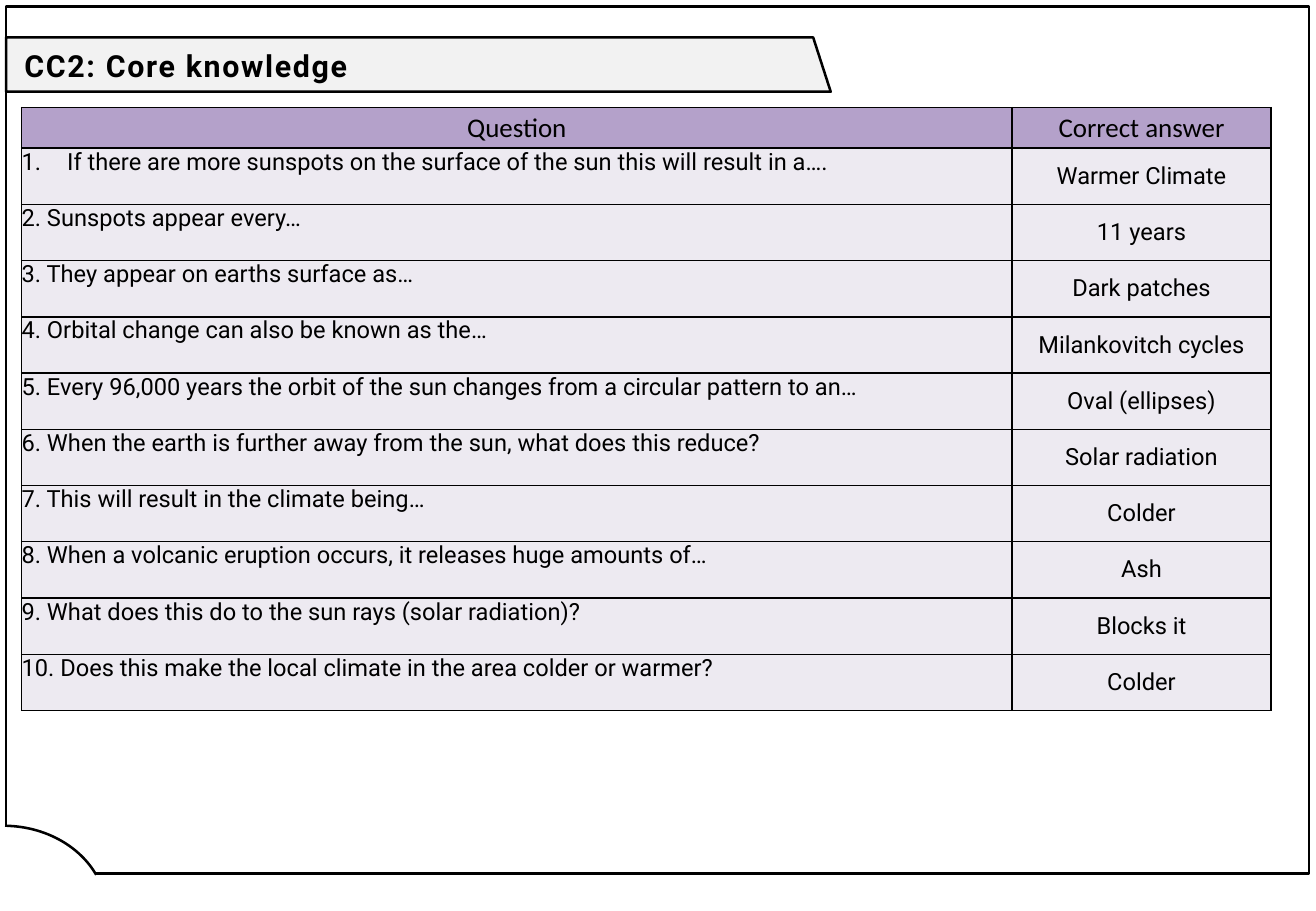
from dataclasses import dataclass

from lxml import etree
from pptx import Presentation
from pptx.dml.color import RGBColor
from pptx.enum.shapes import MSO_SHAPE
from pptx.enum.text import MSO_ANCHOR, MSO_AUTO_SIZE, PP_ALIGN
from pptx.oxml.ns import qn
from pptx.util import Pt

ARC, RECTANGLE = MSO_SHAPE.ARC, MSO_SHAPE.RECTANGLE
TOP, MIDDLE = MSO_ANCHOR.TOP, MSO_ANCHOR.MIDDLE
LEFT, CENTER = PP_ALIGN.LEFT, PP_ALIGN.CENTER
NO_AUTOFIT = MSO_AUTO_SIZE.NONE
TITLE_ONLY = 5


@dataclass(frozen=True)
class Theme:
    ink: str = "000000"
    paper: str = "FFFFFF"
    banner: str = "F2F2F2"
    header: str = "B4A1CA"
    row: str = "EDEAF1"
    header_font: str = "Calibri"
    body_font: str = "Roboto"
    title_size: int = 18
    header_size: int = 16
    body_size: int = 14
    outline: float = 1.5
    grid: float = 1


THEME = Theme()
HEADINGS = ("Question", "Correct answer")
FIRST_QUESTION = "If there are more sunspots on the surface of the sun this will result in a…."
QUIZ = [
    (FIRST_QUESTION, "Warmer Climate"),
    ("2. Sunspots appear every…", "11 years"),
    ("3. They appear on earths surface as…", "Dark patches"),
    ("4. Orbital change can also be known as the…", "Milankovitch cycles"),
    ("5. Every 96,000 years the orbit of the sun changes from a circular pattern to an…",
     "Oval (ellipses)"),
    ("6. When the earth is further away from the sun, what does this reduce?",
     "Solar radiation"),
    ("7. This will result in the climate being…", "Colder"),
    ("8. When a volcanic eruption occurs, it releases huge amounts of…", "Ash"),
    ("9. What does this do to the sun rays (solar radiation)?", "Blocks it"),
    ("10. Does this make the local climate in the area colder or warmer?", "Colder"),
]


def paint(shape, fill=None, outlined=True):
    shape.shadow.inherit = False
    if fill:
        shape.fill.solid()
        shape.fill.fore_color.rgb = RGBColor.from_string(fill)
    else:
        shape.fill.background()
    if outlined:
        shape.line.color.rgb = RGBColor.from_string(THEME.ink)
        shape.line.width = Pt(THEME.outline)
    else:
        shape.line.fill.background()


def add_preset(slide, preset, left, top, width, height, **style):
    shape = slide.shapes.add_shape(preset, Pt(left), Pt(top), Pt(width), Pt(height))
    paint(shape, **style)
    return shape


def add_banner(slide):
    builder = slide.shapes.build_freeform(Pt(3.6), Pt(22.2), scale=1.0)
    corners = [(482, 22.2), (492.4, 54.4), (3.6, 54.4)]
    builder.add_line_segments([(Pt(x), Pt(y)) for x, y in corners], close=True)
    paint(builder.convert_to_shape(), fill=THEME.banner)


def style_font(paragraph, name, size, bold=False):
    font = paragraph.font
    font.name, font.size, font.bold = name, Pt(size), bold
    font.color.rgb = RGBColor.from_string(THEME.ink)


def set_title(slide, text):
    title = slide.shapes.title
    title.left, title.top, title.width, title.height = Pt(7.2), Pt(15.2), Pt(463), Pt(45.4)
    # Bring the title in front of the banner
    title.element.getparent().append(title.element)
    frame = title.text_frame
    frame.text = text
    frame.auto_size = NO_AUTOFIT
    frame.vertical_anchor = MIDDLE
    paragraph = frame.paragraphs[0]
    paragraph.alignment = LEFT
    paragraph.line_spacing = 1.07
    paragraph.space_after = Pt(8)
    style_font(paragraph, THEME.body_font, THEME.title_size, bold=True)
    # Letter spacing in hundredths of a point
    paragraph.runs[0].font._element.set("spc", "100")


def set_borders(cell):
    properties = cell._tc.get_or_add_tcPr()
    for position, side in enumerate(("lnL", "lnR", "lnT", "lnB")):
        line = etree.Element(qn(f"a:{side}"), w=str(Pt(THEME.grid)))
        fill = etree.SubElement(line, qn("a:solidFill"))
        etree.SubElement(fill, qn("a:srgbClr"), val=THEME.ink)
        properties.insert(position, line)


def number_paragraph(paragraph, indent):
    properties = paragraph._p.get_or_add_pPr()
    properties.set("marL", str(Pt(indent)))
    properties.set("indent", str(-Pt(indent)))
    etree.SubElement(properties, qn("a:buAutoNum"), type="arabicPeriod")


def fill_cell(cell, text, fill, font, size, anchor=MIDDLE, align=CENTER):
    cell.margin_left = cell.margin_right = cell.margin_top = cell.margin_bottom = 0
    cell.vertical_anchor = anchor
    cell.fill.solid()
    cell.fill.fore_color.rgb = RGBColor.from_string(fill)
    set_borders(cell)
    cell.text = text
    paragraph = cell.text_frame.paragraphs[0]
    paragraph.alignment = align
    if text == FIRST_QUESTION:
        number_paragraph(paragraph, 27)
    style_font(paragraph, font, size)


def add_quiz_table(slide):
    column_widths, header_height, row_height = (587, 153.6), 24, 33.35
    table = slide.shapes.add_table(
        len(QUIZ) + 1, len(HEADINGS), Pt(12.8), Pt(63.8),
        Pt(sum(column_widths)), Pt(header_height + row_height * len(QUIZ))).table
    for column, width in zip(table.columns, column_widths):
        column.width = Pt(width)
    for index, row in enumerate(table.rows):
        row.height = Pt(row_height if index else header_height)

    for column, heading in enumerate(HEADINGS):
        fill_cell(table.cell(0, column), heading, THEME.header,
                  THEME.header_font, THEME.header_size)
    for index, (question, answer) in enumerate(QUIZ, start=1):
        body = (THEME.row, THEME.body_font, THEME.body_size)
        fill_cell(table.cell(index, 0), question, *body, anchor=TOP, align=LEFT)
        fill_cell(table.cell(index, 1), answer, *body)


def main():
    deck = Presentation()
    deck.slide_width, deck.slide_height = Pt(780), Pt(540)
    slide = deck.slides.add_slide(deck.slide_layouts[TITLE_ONLY])

    # Banner and page frame
    add_banner(slide)
    add_preset(slide, RECTANGLE, 3.6, 3.9, 772.2, 513.8)

    # Rounded cut-out in the lower left corner
    corner_arc = add_preset(slide, ARC, -59, 489.5, 122.4, 104.4, fill=THEME.paper)
    corner_arc.adjustments[0] = 162.53
    corner_arc.adjustments[1] = 202.27
    add_preset(slide, RECTANGLE, 0.7, 490.3, 3.6, 7.2, fill=THEME.paper, outlined=False)

    # Title and quiz
    set_title(slide, "CC2: Core knowledge")
    add_quiz_table(slide)
    deck.save("out.pptx")


if __name__ == "__main__":
    main()
